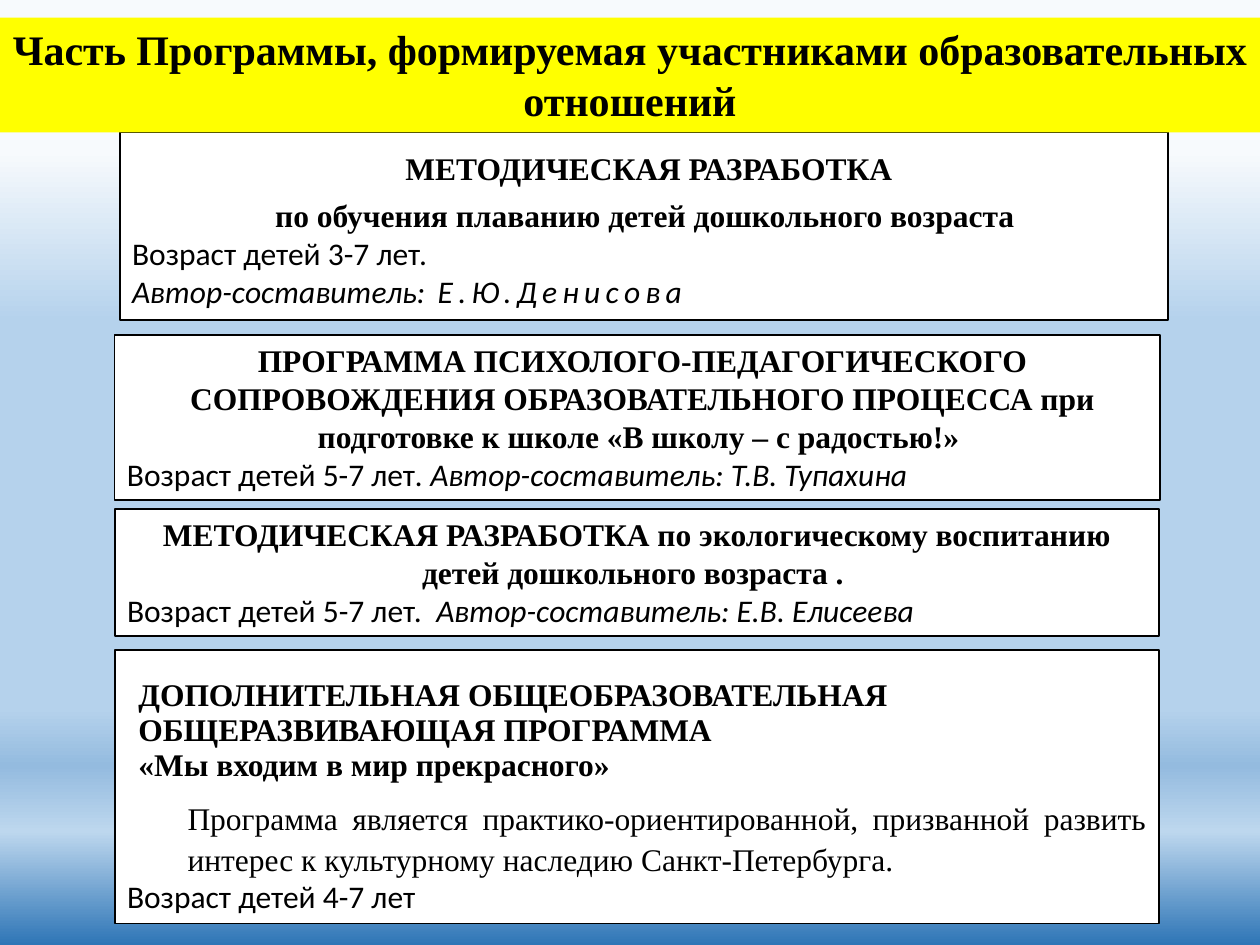
from lxml.etree import SubElement
from pptx import Presentation
from pptx.dml.color import RGBColor
from pptx.enum.shapes import MSO_SHAPE
from pptx.enum.text import MSO_ANCHOR, MSO_AUTO_SIZE, PP_ALIGN
from pptx.oxml.ns import qn
from pptx.util import Inches, Pt

COLORS = {"text": "000000", "line": "000000", "card": "FFFFFF", "banner": "FFFF00"}
BACKGROUND_STOPS = [(16, "F7FAFD"), (34, "B5D2EC"), (75, "B5D2EC"),
                    (81, "94BBDF"), (88, "BDD7EE"), (100, "2E75B6")]

HEADING = {"name": "Times New Roman", "bold": True}
SERIF = {"name": "Times New Roman"}
BODY = {"name": "Calibri"}
AUTHOR = {"name": "Calibri", "italic": True}

CENTERED = {"alignment": PP_ALIGN.CENTER}
LEFT = {"alignment": PP_ALIGN.LEFT}
TIGHT = {**CENTERED, "line_spacing": Pt(13.6)}
STACKED = {**LEFT, "line_spacing": Pt(12), "space_after": Pt(8)}
JUSTIFIED = {"alignment": PP_ALIGN.JUSTIFY, "line_spacing": 1.07}


class SlideBuilder:
    def __init__(self, slide):
        self.slide = slide
        self.size = Pt(18)

    def background(self, stops, angle):
        fill = self.slide.background.fill
        fill.gradient()
        fill.gradient_angle = angle
        stop_list = next(self.slide.element.iter(qn("a:gsLst")))
        for stop in list(stop_list):
            stop_list.remove(stop)
        for percent, color in stops:
            stop = SubElement(stop_list, qn("a:gs"), pos=str(percent * 1000))
            SubElement(stop, qn("a:srgbClr"), val=color)

    def box(self, left, top, width, height, fill, outlined=True, top_inset=0.05):
        shape = self.slide.shapes.add_shape(
            MSO_SHAPE.RECTANGLE, Inches(left), Inches(top), Inches(width), Inches(height))
        shape.shadow.inherit = False
        shape.fill.solid()
        shape.fill.fore_color.rgb = RGBColor.from_string(COLORS[fill])
        if outlined:
            shape.line.color.rgb = RGBColor.from_string(COLORS["line"])
            shape.line.width = Pt(1)
        else:
            shape.line.fill.background()
        frame_format = {"word_wrap": True, "auto_size": MSO_AUTO_SIZE.SHAPE_TO_FIT_TEXT,
                        "vertical_anchor": MSO_ANCHOR.TOP, "margin_top": Inches(top_inset)}
        for name, value in frame_format.items():
            setattr(shape.text_frame, name, value)
        return shape.text_frame

    def paragraphs(self, frame, items, size=None):
        """Each item is (paragraph format, left indent in inches, runs)."""
        for index, (layout, indent, runs) in enumerate(items):
            paragraph = frame.add_paragraph() if index else frame.paragraphs[0]
            for name, value in layout.items():
                setattr(paragraph, name, value)
            if indent:
                paragraph._p.get_or_add_pPr().set("marL", str(Inches(indent)))
            for text, style, *spacing in runs:
                self.run(paragraph, text, style, size or self.size, *spacing)

    def run(self, paragraph, text, style, size, spacing=0):
        run = paragraph.add_run()
        run.text = text
        for name, value in {"size": size, **style}.items():
            setattr(run.font, name, value)
        run.font.color.rgb = RGBColor.from_string(COLORS["text"])
        if spacing:
            run._r.get_or_add_rPr().set("spc", str(spacing * 100))


def main():
    presentation = Presentation()
    presentation.slide_width, presentation.slide_height = Inches(10), Inches(7.5)
    builder = SlideBuilder(presentation.slides.add_slide(presentation.slide_layouts[6]))
    builder.background(BACKGROUND_STOPS, 270)

    swimming = builder.box(0.95, 1.05, 8.32, 1.49, "card", top_inset=0.24)
    builder.paragraphs(swimming, [
        (TIGHT, 0.08, [("МЕТОДИЧЕСКАЯ РАЗРАБОТКА", HEADING)]),
        ({**TIGHT, "space_before": Pt(13.6)}, 0.08,
         [("по обучения плаванию детей дошкольного возраста ", HEADING)]),
        (LEFT, 0, [("Возраст детей 3-7 лет.", BODY)]),
        (LEFT, 0, [("Автор-составитель:", AUTHOR), (" Е.Ю.Денисова", AUTHOR, 3)]),
    ])

    banner = builder.box(0, 0.14, 10, 0.91, "banner", outlined=False)
    builder.paragraphs(banner, [
        (CENTERED, 0, [("Часть Программы, формируемая участниками образовательных отношений",
                        HEADING)]),
    ], size=Pt(24))

    school = builder.box(0.91, 2.66, 8.3, 1.31, "card")
    builder.paragraphs(school, [
        (CENTERED, 0.08, [("ПРОГРАММА ПСИХОЛОГО-ПЕДАГОГИЧЕСКОГО СОПРОВОЖДЕНИЯ "
                           "ОБРАЗОВАТЕЛЬНОГО ПРОЦЕССА при подготовке к школе "
                           "«В школу – с радостью!» ", HEADING)]),
        (LEFT, 0, [("Возраст детей 5-7 лет", BODY),
                   (". Автор-составитель: Т.В. Тупахина", AUTHOR)]),
    ])

    ecology = builder.box(0.91, 4.04, 8.29, 1.01, "card")
    builder.paragraphs(ecology, [
        (CENTERED, 0, [("МЕТОДИЧЕСКАЯ РАЗРАБОТКА по экологическому воспитанию "
                        "детей дошкольного возраста . ", HEADING)]),
        (LEFT, 0, [("Возраст детей 5-7 лет.  ", BODY),
                   ("Автор-составитель: Е.В. Елисеева", AUTHOR)]),
    ])

    culture = builder.box(0.91, 5.16, 8.29, 2.17, "card", top_inset=0.33)
    titles = ["ДОПОЛНИТЕЛЬНАЯ ОБЩЕОБРАЗОВАТЕЛЬНАЯ", "ОБЩЕРАЗВИВАЮЩАЯ ПРОГРАММА",
              "«Мы входим в мир прекрасного»"]
    builder.paragraphs(culture, [
        *((STACKED, 0.09, [(title, HEADING)]) for title in titles),
        (JUSTIFIED, 0.48, [("Программа является практико-ориентированной, призванной развить "
                            "интерес к культурному наследию Санкт-Петербурга.", SERIF)]),
        (LEFT, 0, [("Возраст детей 4-7 лет", BODY)]),
    ])

    presentation.save("out.pptx")


if __name__ == "__main__":
    main()
